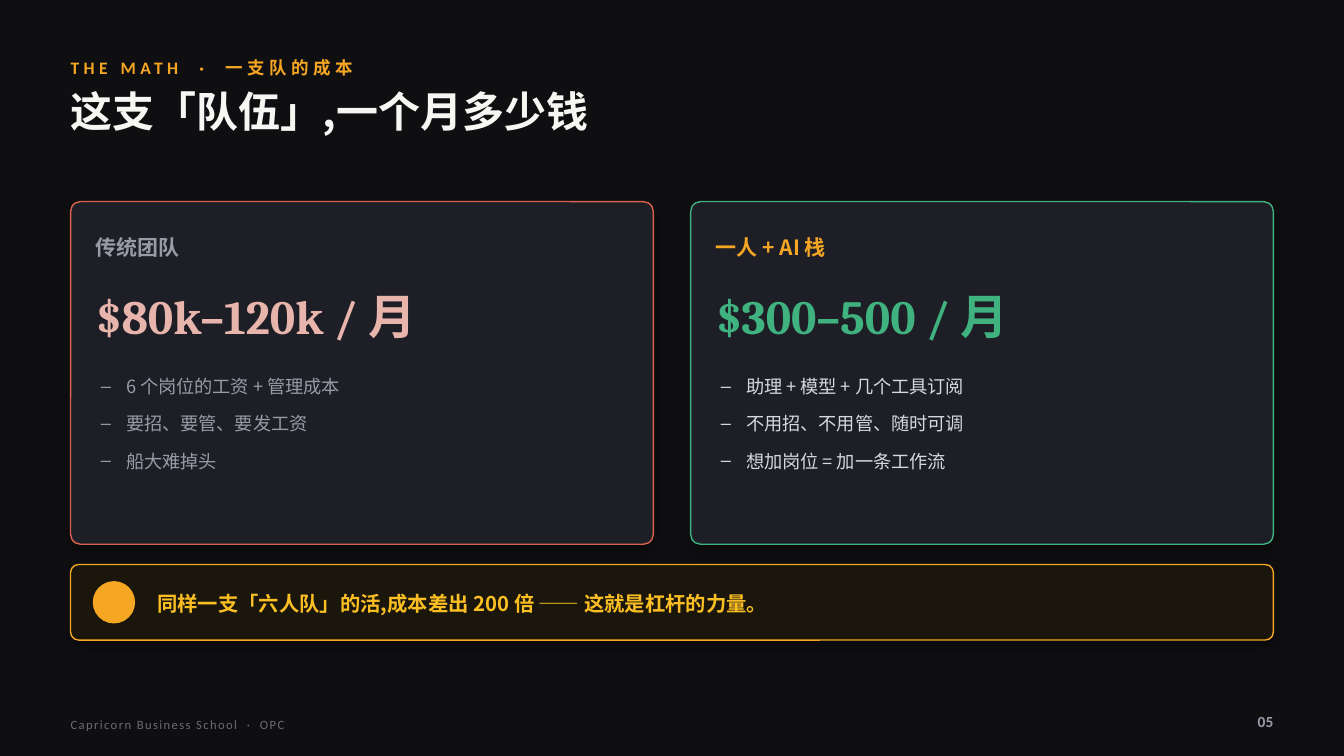
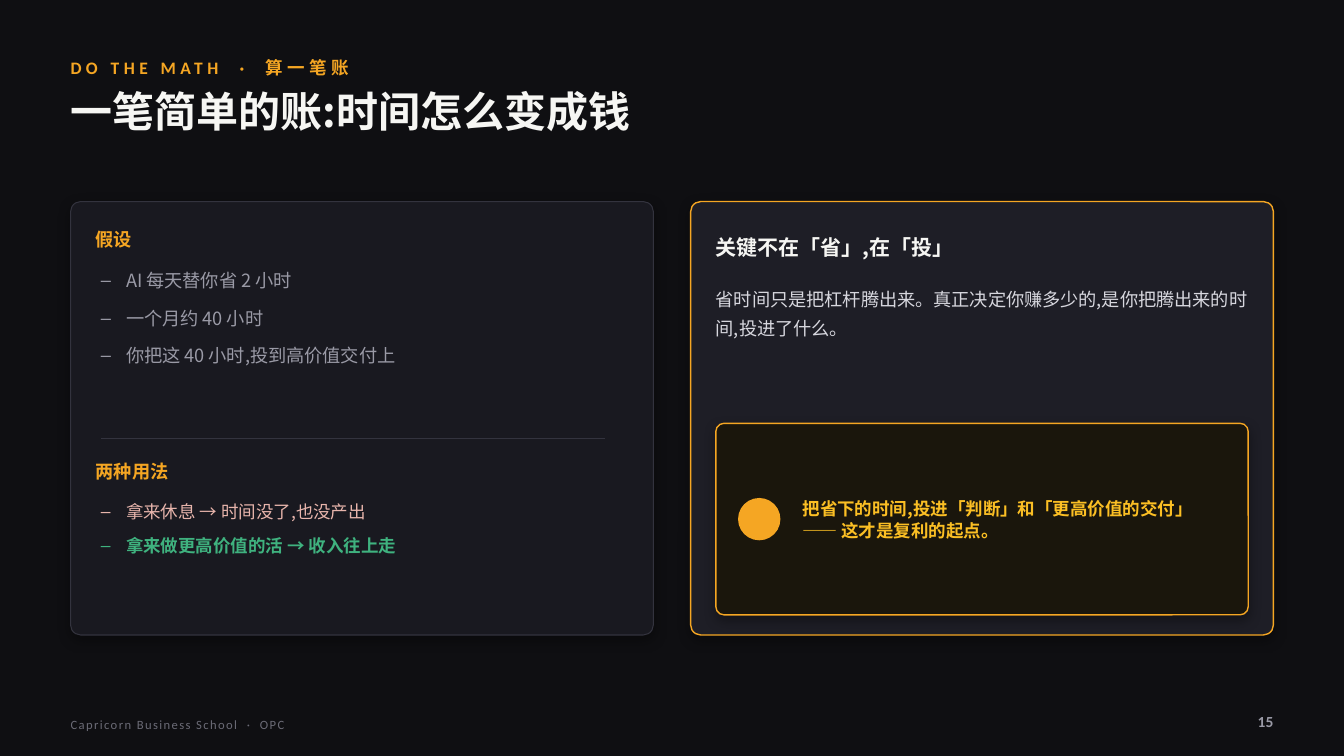
from lxml.etree import SubElement
from pptx import Presentation
from pptx.dml.color import RGBColor
from pptx.enum.shapes import MSO_CONNECTOR, MSO_SHAPE
from pptx.enum.text import MSO_ANCHOR, MSO_AUTO_SIZE, PP_ALIGN
from pptx.oxml.ns import qn
from pptx.util import Inches, Pt

NIGHT = RGBColor(0x0F, 0x0F, 0x12)
COAL = RGBColor(0x19, 0x19, 0x20)
SLATE = RGBColor(0x1E, 0x1E, 0x26)
EDGE = RGBColor(0x33, 0x33, 0x3E)
UMBER = RGBColor(0x1A, 0x16, 0x0C)
AMBER = RGBColor(0xF5, 0xA6, 0x23)
GOLD = RGBColor(0xFB, 0xBF, 0x24)
WHITE = RGBColor(0xF6, 0xF6, 0xF3)
PALE = RGBColor(0xD7, 0xD7, 0xDE)
GREY = RGBColor(0x9A, 0x9A, 0xA6)
DIM = RGBColor(0x6B, 0x6B, 0x76)
RED = RGBColor(0xD9, 0x62, 0x4E)
ROSE = RGBColor(0xE8, 0xB5, 0xAC)
GREEN = RGBColor(0x3F, 0xB2, 0x7F)

SANS = "Noto Sans CJK SC"
LATIN = "Calibri"
SERIF = "Cambria"

LEFT, TOP, WIDE, GAP = 0.7, 2, 11.93, 0.37
HALF = (WIDE - GAP) / 2
PAD = 0.25
DOT = 0.42


def place(shape, left, top, width, height):
    shape.left, shape.top = Inches(left), Inches(top)
    shape.width, shape.height = Inches(width), Inches(height)


def clear(frame, anchor):
    frame.word_wrap = True
    frame.auto_size = MSO_AUTO_SIZE.NONE
    frame.vertical_anchor = anchor
    frame.margin_left = frame.margin_right = 0
    frame.margin_top = frame.margin_bottom = 0


def style(para, size, color, bold=False, face=SANS, space=0):
    for run in para.runs:
        font = run.font
        font.size, font.bold, font.name = Pt(size), bold, face
        font.color.rgb = color
        props = run._r.get_or_add_rPr()
        SubElement(props, qn("a:ea")).set("typeface", SANS)
        if space:
            props.set("spc", str(int(space * 100)))


def write(slide, box, text, size, color, bold=True, face=SANS, space=0,
          anchor=MSO_ANCHOR.MIDDLE, line=None, align=PP_ALIGN.LEFT):
    shape = slide.shapes.add_textbox(*map(Inches, box))
    clear(shape.text_frame, anchor)
    para = shape.text_frame.paragraphs[0]
    para.text = text
    para.alignment = align
    if line:
        para.line_spacing = line
    style(para, size, color, bold, face, space)


def bullets(slide, index, box, items, size=13, after=9):
    shape = slide.placeholders[index]
    place(shape, *box)
    slide.shapes.element.append(shape.element)
    frame = shape.text_frame
    clear(frame, MSO_ANCHOR.TOP)
    frame.text = "\n".join(text for text, _, _ in items)
    for para, (_, color, bold) in zip(frame.paragraphs, items):
        props = para._p.get_or_add_pPr()
        props.set("marL", str(Inches(0.25)))
        props.set("indent", str(-Inches(0.25)))
        SubElement(props, qn("a:buChar")).set("char", "–")
        para.line_spacing = 1.12
        para.space_before, para.space_after = Pt(0), Pt(after)
        style(para, size, color, bold)


def shade(shape):
    effect = SubElement(shape.element.spPr, qn("a:effectLst"))
    outer = SubElement(effect, qn("a:outerShdw"), blurRad=str(Pt(9)),
                       dist=str(Pt(3)), dir="5400000", algn="bl", rotWithShape="0")
    color = SubElement(outer, qn("a:srgbClr"), val="000000")
    SubElement(color, qn("a:alpha"), val="34000")


def panel(slide, box, fill, edge, weight=1, radius=0.1):
    shape = slide.shapes.add_shape(MSO_SHAPE.ROUNDED_RECTANGLE, *map(Inches, box))
    shape.adjustments[0] = radius / min(box[2:])
    shape.fill.solid()
    shape.fill.fore_color.rgb = fill
    shape.line.color.rgb = edge
    shape.line.width = Pt(weight)
    shade(shape)


def callout(slide, box, text, size):
    left, top, width, height = box
    panel(slide, box, UMBER, AMBER, radius=0.08)
    spot = (left + 0.22, top + (height - DOT) / 2, DOT, DOT)
    dot = slide.shapes.add_shape(MSO_SHAPE.OVAL, *map(Inches, spot))
    dot.shadow.inherit = False
    dot.fill.solid()
    dot.fill.fore_color.rgb = AMBER
    dot.line.fill.background()
    write(slide, (left + 0.86, top, width - 1.1, height), text, size, GOLD, line=1.05)


def rule(slide, left, top, width):
    line = slide.shapes.add_connector(
        MSO_CONNECTOR.STRAIGHT, *map(Inches, (left, top, left + width, top)))
    line.line.color.rgb = EDGE
    line.line.width = Pt(0.75)
    SubElement(line.element.spPr, qn("a:effectLst"))


def start(deck, label, title, number):
    slide = deck.slides.add_slide(deck.slide_layouts[3])
    write(slide, (LEFT, 0.52, WIDE, 0.3), label, 12.5, AMBER, face=LATIN, space=3.2)
    head = slide.shapes.title
    place(head, LEFT, 0.85, WIDE, 0.9)
    clear(head.text_frame, MSO_ANCHOR.TOP)
    para = head.text_frame.paragraphs[0]
    para.text = title
    para.alignment = PP_ALIGN.LEFT
    style(para, 30, WHITE, True)
    write(slide, (LEFT, 7.04, 7, 0.3), "Capricorn Business School  ·  OPC", 9, DIM,
          False, LATIN, 1)
    write(slide, (LEFT + WIDE - 0.8, 7, 0.8, 0.32), number, 11, GREY, face=LATIN,
          align=PP_ALIGN.RIGHT)
    return slide


def price(slide, index, box, edge, name, tint, cost, hue, items, tone):
    left, top = box[0] + PAD, box[1]
    panel(slide, box, SLATE, edge)
    write(slide, (left, top + 0.25, 5, 0.4), name, 15, tint)
    write(slide, (left, top + 0.7, 5.3, 0.85), cost, 34, hue, face=SERIF)
    bullets(slide, index, (left + 0.05, top + 1.7, 5.2, 1.6),
            [(item, tone, False) for item in items])


def usage(slide, box):
    left, top = box[0] + PAD, box[1]
    panel(slide, box, COAL, EDGE, 0.75)
    write(slide, (left, top + 0.2, 5, 0.35), "假设", 13, AMBER)
    facts = ["AI 每天替你省 2 小时", "一个月约 40 小时", "你把这 40 小时,投到高价值交付上"]
    bullets(slide, 1, (left + 0.05, top + 0.65, 5.2, 1.7),
            [(fact, GREY, False) for fact in facts])
    rule(slide, left + 0.05, top + 2.35, 5)
    write(slide, (left, top + 2.5, 5, 0.35), "两种用法", 13, AMBER)
    bullets(slide, 2, (left + 0.05, top + 2.95, 5.2, 1.2),
            [("拿来休息 → 时间没了,也没产出", ROSE, False),
             ("拿来做更高价值的活 → 收入往上走", GREEN, True)], 12.5, 7)


def lesson(slide, box):
    left, top, width = box[0] + PAD, box[1], box[2] - 2 * PAD
    panel(slide, box, SLATE, AMBER)
    write(slide, (left, top + 0.25, 5, 0.4), "关键不在「省」,在「投」", 15, WHITE)
    write(slide, (left, top + 0.8, 5.3, 1.2),
          "省时间只是把杠杆腾出来。真正决定你赚多少的,是你把腾出来的时间,投进了什么。",
          13, PALE, False, anchor=MSO_ANCHOR.TOP, line=1.3)
    callout(slide, (left, top + 2.2, width, 1.9),
            "把省下的时间,投进「判断」和「更高价值的交付」—— 这才是复利的起点。", 12.5)


def halves(height):
    return [(LEFT + i * (HALF + GAP), TOP, HALF, height) for i in range(2)]


def costs(deck):
    slide = start(deck, "THE MATH  ·  一支队的成本", "这支「队伍」,一个月多少钱", "05")
    team, solo = halves(3.4)
    price(slide, 1, team, RED, "传统团队", GREY, "$80k–120k / 月", ROSE,
          ["6 个岗位的工资 + 管理成本", "要招、要管、要发工资", "船大难掉头"], GREY)
    price(slide, 2, solo, GREEN, "一人 + AI 栈", AMBER, "$300–500 / 月", GREEN,
          ["助理 + 模型 + 几个工具订阅", "不用招、不用管、随时可调", "想加岗位 = 加一条工作流"], PALE)
    callout(slide, (LEFT, 5.6, WIDE, 0.75),
            "同样一支「六人队」的活,成本差出 200 倍 —— 这就是杠杆的力量。", 14.5)


def hours(deck):
    slide = start(deck, "DO THE MATH  ·  算一笔账", "一笔简单的账:时间怎么变成钱", "15")
    left, right = halves(4.3)
    usage(slide, left)
    lesson(slide, right)


def main():
    deck = Presentation()
    deck.slide_width, deck.slide_height = Inches(13.33), Inches(7.5)
    back = deck.slide_master.background.fill
    back.solid()
    back.fore_color.rgb = NIGHT
    costs(deck)
    hours(deck)
    deck.save("out.pptx")


if __name__ == "__main__":
    main()
